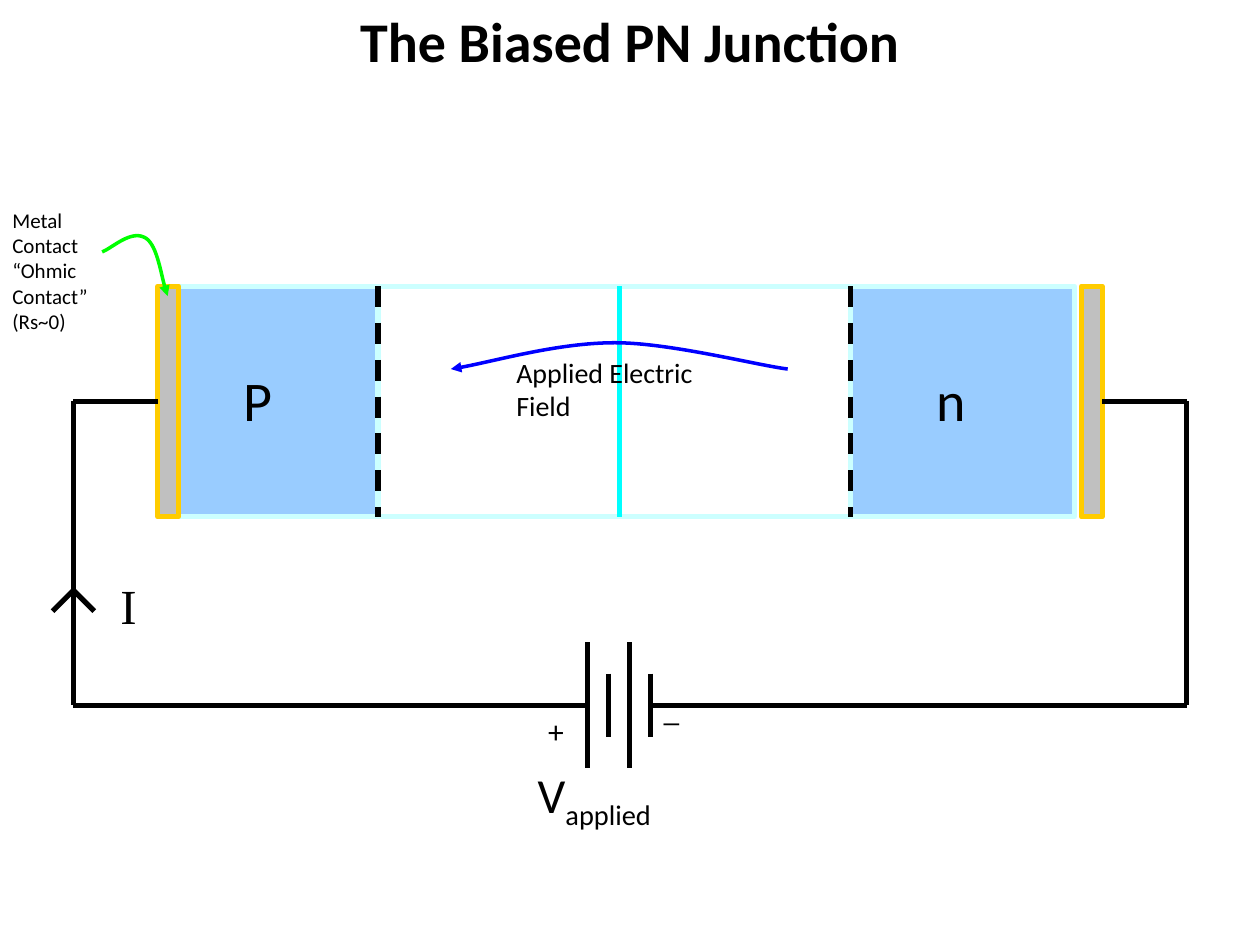
"""Build the slide on the biased PN junction and its circuit."""
import dataclasses

import pptx
import pptx.dml.color
import pptx.enum.dml
import pptx.enum.shapes
import pptx.enum.text
import pptx.oxml.xmlchemy
import pptx.util

Cm = pptx.util.Cm
Pt = pptx.util.Pt
rgb = pptx.dml.color.RGBColor.from_string
node = pptx.oxml.xmlchemy.OxmlElement


@dataclasses.dataclass(frozen=True)
class Theme:
    black: str = "000000"
    white: str = "FFFFFF"
    blue: str = "99CCFF"
    edge: str = "CCFFFF"
    metal: str = "C0C0C0"
    gold: str = "FFCC00"
    cyan: str = "00FFFF"
    field: str = "0000FF"
    hint: str = "00FF00"
    font: str = "Calibri"
    serif: str = "Times New Roman"
    large: int = 32
    sign: int = 28
    pole: int = 18
    body: int = 16
    note: int = 12
    thick: int = 3
    thin: int = 2


look = Theme()
deck = pptx.Presentation()
deck.slide_width, deck.slide_height = Cm(25.4), Cm(19.05)
slide = deck.slides.add_slide(deck.slide_layouts[6])
shapes = slide.shapes


def write(text, left, top, width, height, size, font=look.font, bold=False, align=None, sub=""):
    box = shapes.add_textbox(Cm(left), Cm(top), Cm(width), Cm(height))
    frame = box.text_frame
    frame.word_wrap = True
    frame.auto_size = pptx.enum.text.MSO_AUTO_SIZE.SHAPE_TO_FIT_TEXT
    for i, line in enumerate(text.split("\n")):
        para = frame.add_paragraph() if i else frame.paragraphs[0]
        para.alignment = align
        for part in filter(None, (line, sub)):
            run = para.add_run()
            run.text = part
            run.font.size, run.font.name, run.font.bold = Pt(size), font, bold
            run.font.color.rgb = rgb(look.black)
        if sub:
            run._r.get_or_add_rPr().set("baseline", "-25000")


def stroke(shape, color, width):
    shape.line.color.rgb = rgb(color)
    shape.line.width = Pt(width)


top, tall = 5.77, 4.65
base, mid = top + tall, 8.09
left, right, low = 1.48, 23.92, 14.22
p_edge, join, n_edge = 7.62, 12.49, 17.14
p_end, n_end, slab = 3.18, 21.8, 0.42

for x, wide, fill, edge in [
    (p_end + slab, p_edge - p_end - slab, look.blue, look.edge),
    (p_edge, join - p_edge, look.white, look.edge),
    (join, n_edge - join, look.white, look.edge),
    (n_edge, 4.52, look.blue, look.edge),
    (p_end, slab, look.metal, look.gold),
    (n_end, slab, look.metal, look.gold),
]:
    block = shapes.add_shape(pptx.enum.shapes.MSO_SHAPE.RECTANGLE, Cm(x), Cm(top), Cm(wide), Cm(tall))
    block.shadow.inherit = False
    block.fill.solid()
    block.fill.fore_color.rgb = rgb(fill)
    stroke(block, edge, look.thick)

cell, gap, tip, barb = 11.85, 0.42, 11.9, 0.42
wires = [
    (p_end, mid, left, mid),
    (right, mid, n_end + slab, mid),
    (left, mid, left, low),
    (left, low, cell, low),
    (right, mid, right, low),
    (right, low, cell + 3 * gap, low),
    (left, tip, left - barb, tip + barb),
    (left, tip, left + barb, tip + barb),
]
for i in range(4):
    x, half = cell + i * gap, (1.27, 0.64)[i % 2]
    wires.append((x, low - half, x, low + half))

lines = [((x, top, x, base), look.black, True) for x in (p_edge, n_edge)]
lines.append(((join, top, join, base), look.cyan, False))
lines += [(wire, look.black, False) for wire in wires]
for ends, color, dash in lines:
    wire = shapes.add_connector(pptx.enum.shapes.MSO_CONNECTOR.STRAIGHT, *map(Cm, ends))
    stroke(wire, color, look.thick)
    if dash:
        wire.line.dash_style = pptx.enum.dml.MSO_LINE.DASH
    wire._element.spPr.append(node("a:effectLst"))

for color, start, *points in [
    (look.field, (15.88, 7.44), (15.29, 7.37), (13.51, 6.91), (12.4, 6.91),
     (11.25, 6.91), (9.78, 7.34), (9.09, 7.44)),
    (look.hint, (2.06, 5.08), (2.26, 5), (2.62, 4.65), (2.9, 4.78),
     (3.15, 4.88), (3.28, 5.72), (3.38, 5.97)),
]:
    pen = shapes.build_freeform(*map(Cm, start))
    pen.add_line_segments([(Cm(x), Cm(y)) for x, y in points], close=False)
    curve = pen.convert_to_shape()
    curve.shadow.inherit = False
    curve.fill.background()
    stroke(curve, color, look.thin)
    steps = curve._element.xpath(".//a:lnTo")
    for i in range(0, len(steps), 3):
        bend = node("a:cubicBezTo")
        steps[i].addprevious(bend)
        for step in steps[i:i + 3]:
            bend.append(step[0])
            step.getparent().remove(step)
    head = node("a:tailEnd")
    head.set("type", "triangle")
    curve._element.spPr.get_or_add_ln().append(head)

write("The Biased PN Junction", 2.54, 0, 20.32, 1.6, look.large, bold=True,
      align=pptx.enum.text.PP_ALIGN.CENTER)
write("P", 4.65, 7.24, 1.85, 1.6, look.large)
write("n", 18.62, 7.24, 1.85, 1.6, look.large)
write("Applied Electric Field", 10.16, 7.04, 4.45, 1.63, look.body)
write("Metal Contact\n“Ohmic Contact”\n(Rs~0)", 0, 4.06, 2.34, 3.3, look.note)
write("+", 10.8, 14.22, 1.07, 1.02, look.pole)
write("_", 13.13, 13.79, 1.07, 1.02, look.pole)
write("V", 10.59, 15.29, 4.45, 1.45, look.sign, sub="applied")
write("I", 2.18, 11.48, 1.85, 1.45, look.sign, font=look.serif)

deck.save("out.pptx")
